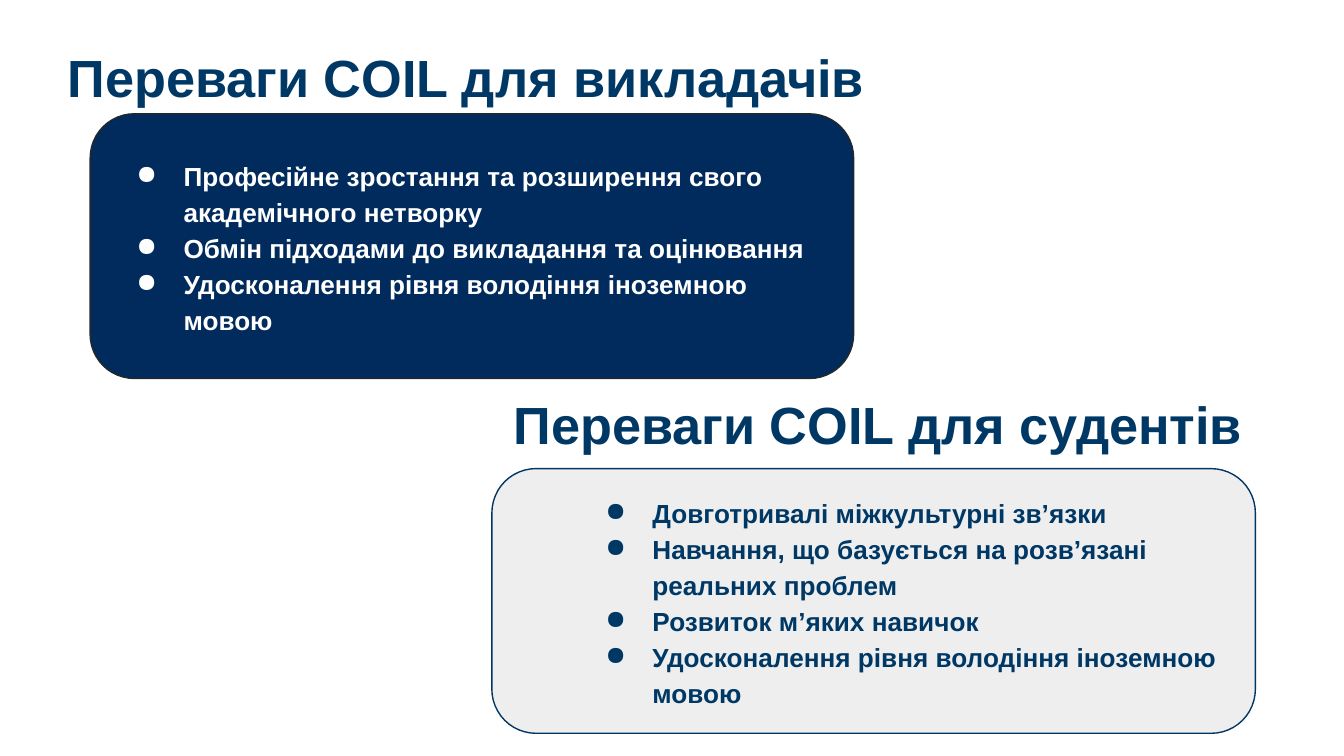
from dataclasses import dataclass

from pptx import Presentation
from pptx.dml.color import RGBColor
from pptx.enum.shapes import MSO_SHAPE as Shape
from pptx.enum.text import MSO_ANCHOR as Anchor, MSO_AUTO_SIZE as AutoSize, PP_ALIGN as Align
from pptx.oxml.ns import qn
from pptx.util import Pt
from lxml.etree import SubElement


@dataclass(frozen=True)
class Theme:
    font: str = "Arial"
    heading_size: float = 28
    body_size: float = 14
    blue: str = "003865"
    navy: str = "002B5C"
    charcoal: str = "23292B"
    edge_blue: str = "003664"
    gray: str = "EEEEEE"
    white: str = "FFFFFF"


THEME = Theme()
CARD_SIZE = (409, 141.8)
HEADING_HEIGHT = 39.6
BULLET_HANG = 25.2

TEACHER_BENEFITS = [
    "Професійне зростання та розширення свого академічного нетворку",
    "Обмін підходами до викладання та оцінювання",
    "Удосконалення рівня володіння іноземною мовою",
]
STUDENT_BENEFITS = [
    "Довготривалі міжкультурні зв’язки",
    "Навчання, що базується на розв’язані реальних проблем",
    "Розвиток м’яких навичок",
    "Удосконалення рівня володіння іноземною мовою",
]


def rgb(color):
    return RGBColor.from_string(color)


def set_margins(frame, across, down):
    frame.margin_left = frame.margin_right = Pt(across)
    frame.margin_top = frame.margin_bottom = Pt(down)


def add_bullet(para, indent, color):
    props = para._p.get_or_add_pPr()
    props.set("marL", str(Pt(indent)))
    props.set("indent", str(-Pt(BULLET_HANG)))
    bullet_color = SubElement(props, qn("a:buClr"))
    SubElement(bullet_color, qn("a:srgbClr"), val=color)
    SubElement(props, qn("a:buChar"), char="●")


def write(para, text, *, size, color, bold=True, indent=None, spacing=None):
    """Fill a paragraph; an indent makes it a bulleted item."""
    if indent is not None:
        add_bullet(para, indent, color)
    para.alignment = Align.LEFT
    if spacing:
        para.line_spacing = spacing
    span = para.add_run()
    span.text = text
    span.font.name = THEME.font
    span.font.size = Pt(size)
    span.font.bold = bold
    span.font.color.rgb = rgb(color)


def add_heading(page, text, left, top, width):
    box = page.shapes.add_textbox(Pt(left), Pt(top), Pt(width), Pt(HEADING_HEIGHT))
    frame = box.text_frame
    frame.word_wrap = True
    frame.auto_size = AutoSize.SHAPE_TO_FIT_TEXT
    set_margins(frame, 5.2, 2.6)
    write(frame.paragraphs[0], text, size=THEME.heading_size, color=THEME.blue)


def add_card(page, items, left, top, *, fill, line, color, indent):
    """Draw a rounded card with a bulleted list."""
    width, height = CARD_SIZE
    card = page.shapes.add_shape(
        Shape.ROUNDED_RECTANGLE, Pt(left), Pt(top), Pt(width), Pt(height))
    card.shadow.inherit = False
    card.fill.solid()
    card.fill.fore_color.rgb = rgb(fill)
    card.line.color.rgb = rgb(line)
    card.line.width = Pt(0.75)
    frame = card.text_frame
    frame.word_wrap = True
    frame.vertical_anchor = Anchor.MIDDLE
    set_margins(frame, 7.2, 7.2)
    for index, item in enumerate(items):
        para = frame.add_paragraph() if index else frame.paragraphs[0]
        write(para, item, size=THEME.body_size, color=color,
              indent=indent, spacing=1.15)


def main():
    deck = Presentation()
    deck.slide_width, deck.slide_height = Pt(720), Pt(405)
    page = deck.slides.add_slide(deck.slide_layouts[6])

    add_heading(page, "Переваги COIL для викладачів", 31, 21.6, 536.4)
    add_card(page, TEACHER_BENEFITS, 48.3, 61, fill=THEME.navy,
             line=THEME.charcoal, color=THEME.white, indent=36)
    add_heading(page, "Переваги COIL для судентів", 270, 207.4, 409)
    add_card(page, STUDENT_BENEFITS, 263.5, 251.1, fill=THEME.gray,
             line=THEME.edge_blue, color=THEME.blue, indent=72)

    deck.save("out.pptx")


if __name__ == "__main__":
    main()
